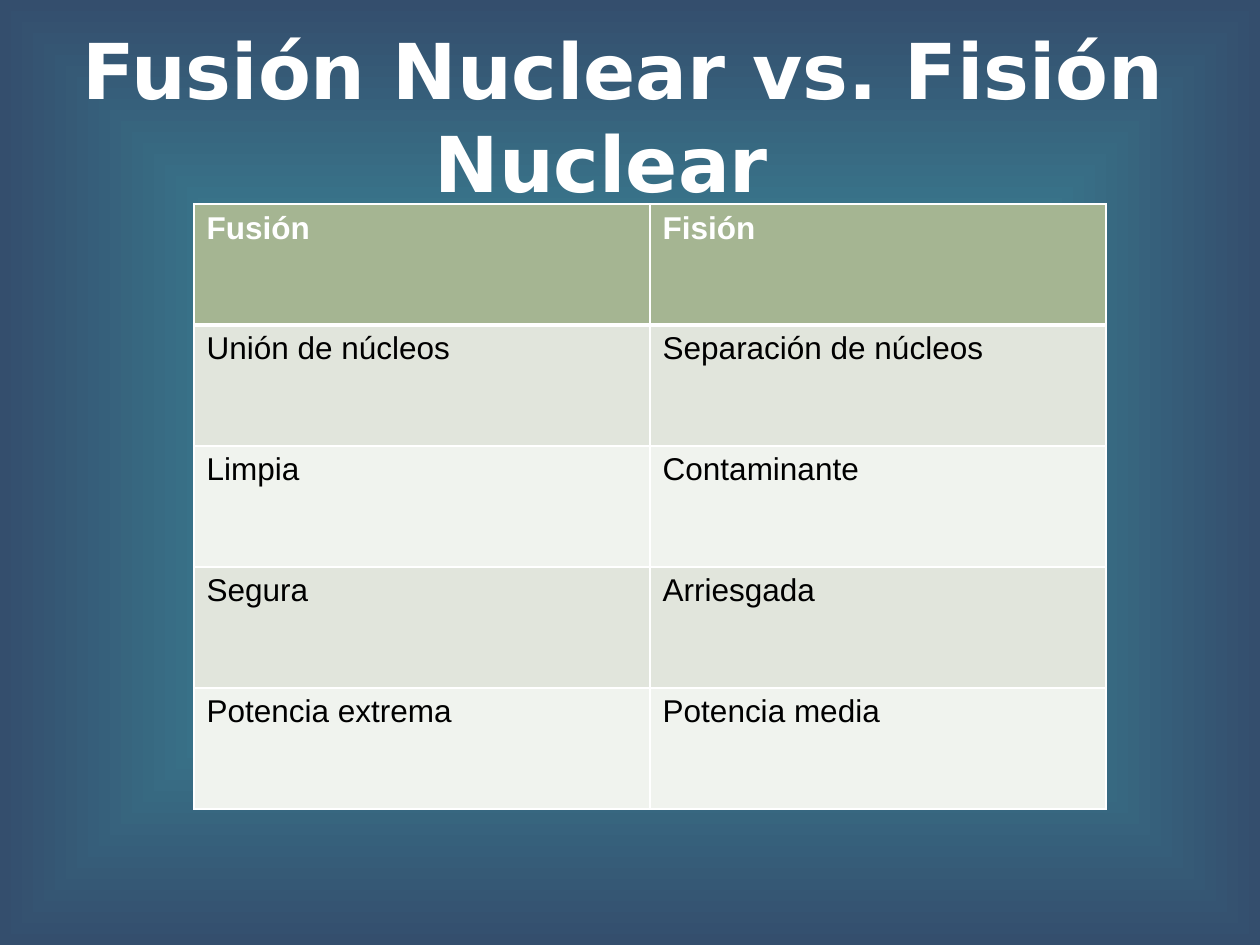
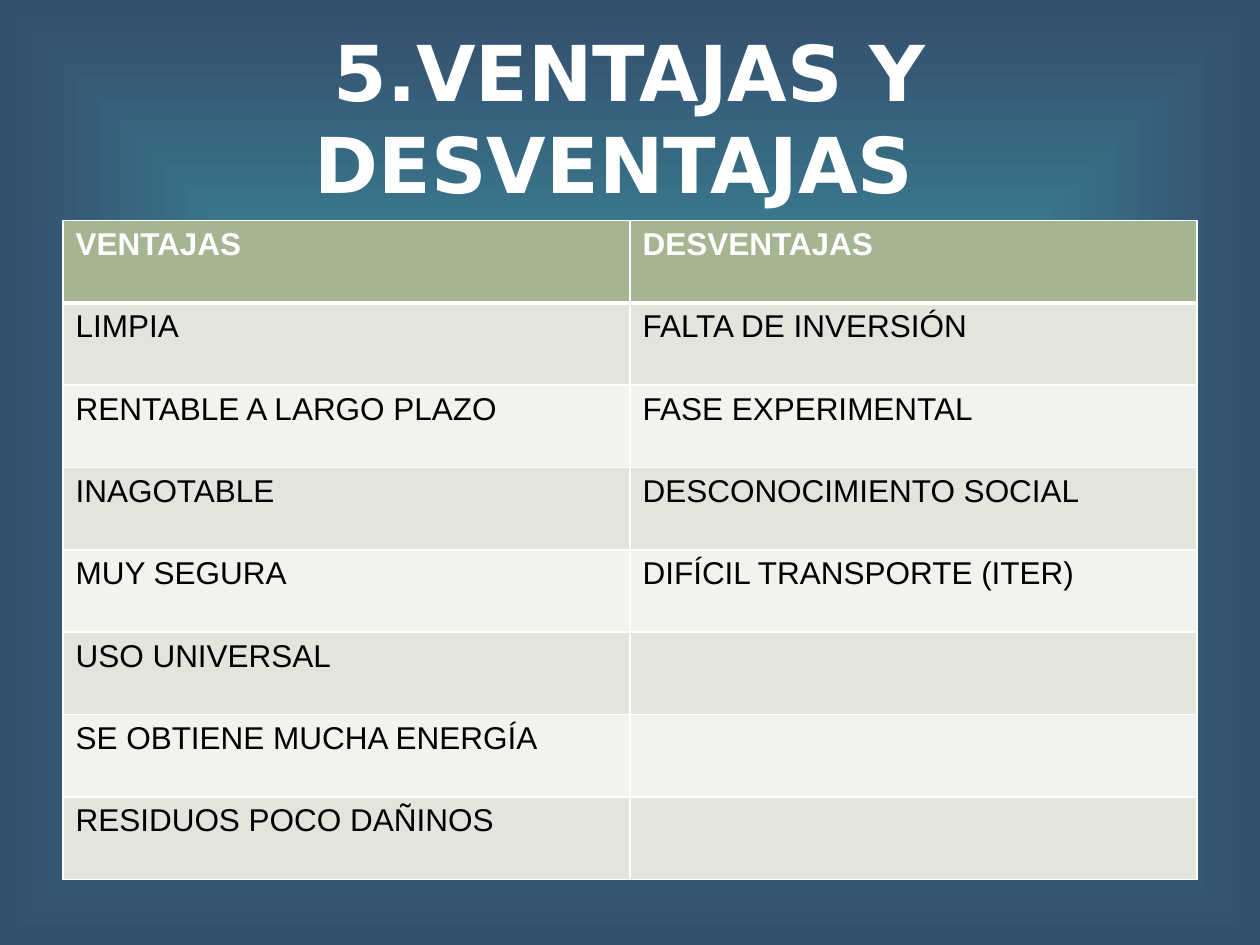
from lxml import etree
from pptx import Presentation
from pptx.dml.color import RGBColor
from pptx.enum.text import MSO_ANCHOR, PP_ALIGN
from pptx.oxml.ns import qn
from pptx.util import Inches, Pt

CENTER = PP_ALIGN.CENTER
MIDDLE = MSO_ANCHOR.MIDDLE
BLANK_LAYOUT = 6

# The slide is a grid of 100 columns by 75 rows
COLUMNS, ROWS = 100, 75

COMPARISON = [
    ("Fusión", "Fisión"),
    ("Unión de núcleos", "Separación de núcleos"),
    ("Limpia", "Contaminante"),
    ("Segura", "Arriesgada"),
    ("Potencia extrema", "Potencia media"),
]

PROS_AND_CONS = [
    ("VENTAJAS", "DESVENTAJAS"),
    ("LIMPIA", "FALTA DE INVERSIÓN"),
    ("RENTABLE A LARGO PLAZO", "FASE EXPERIMENTAL"),
    ("INAGOTABLE", "DESCONOCIMIENTO SOCIAL"),
    ("MUY SEGURA", "DIFÍCIL TRANSPORTE (ITER)"),
    ("USO UNIVERSAL", ""),
    ("SE OBTIENE MUCHA ENERGÍA", ""),
    ("RESIDUOS POCO DAÑINOS", ""),
]


def color(value):
    return RGBColor.from_string(value)


class SlideBuilder:
    """Holds the shared style and the slide being built."""

    title_font, title_size = "DejaVu Sans", 44
    body_font, body_size = "Arial", 18
    white, black = "FFFFFF", "000000"
    glow, edge = "3FA4AF", "344E6D"
    header_fill = "A5B592"
    band_fills = ("F0F3EE", "E1E5DC")
    thin, thick = 1, 3

    def __init__(self, deck):
        self.deck = deck
        self.slide = None

    def place(self, left, top, width, height):
        column = self.deck.slide_width / COLUMNS
        row = self.deck.slide_height / ROWS
        return (round(left * column), round(top * row),
                round(width * column), round(height * row))

    def new_slide(self):
        layout = self.deck.slide_layouts[BLANK_LAYOUT]
        self.slide = self.deck.slides.add_slide(layout)
        self.background()

    def background(self):
        fill = self.slide.background.fill
        fill.gradient()
        for stop, position, shade in zip(fill.gradient_stops, (0, 1), (self.glow, self.edge)):
            stop.position = position
            stop.color.rgb = color(shade)
        # Let the gradient spread from the centre of the slide
        gradient = self.slide.element.find(".//" + qn("a:gradFill"))
        gradient.remove(gradient.find(qn("a:lin")))
        spread = etree.SubElement(gradient, qn("a:path"), path="shape")
        etree.SubElement(spread, qn("a:fillToRect"),
                         {side: "50000" for side in "ltrb"})

    def format_runs(self, para, font, size, shade, bold):
        for span in para.runs:
            span.font.name = font
            span.font.size = Pt(size)
            span.font.bold = bold
            span.font.color.rgb = color(shade)

    def title(self, text, at):
        frame = self.slide.shapes.add_textbox(*self.place(*at)).text_frame
        frame.word_wrap = True
        frame.vertical_anchor = MIDDLE
        frame.text = text
        para = frame.paragraphs[0]
        para.alignment = CENTER
        self.format_runs(para, self.title_font, self.title_size, self.white, True)

    def table(self, records, at):
        left, top, width, height = self.place(*at)
        table = self.slide.shapes.add_table(
            len(records), len(records[0]), left, top, width, height).table
        table.first_row = table.horz_banding = False
        for row_index, record in enumerate(records):
            for column_index, text in enumerate(record):
                self.cell(table.cell(row_index, column_index), row_index, text)

    def cell(self, cell, row_index, text):
        is_header = row_index == 0
        self.borders(cell,
                     top=self.thick if row_index == 1 else self.thin,
                     bottom=self.thick if is_header else self.thin)
        cell.fill.solid()
        cell.fill.fore_color.rgb = color(
            self.header_fill if is_header else self.band_fills[row_index % 2])
        cell.text_frame.text = text
        self.format_runs(cell.text_frame.paragraphs[0], self.body_font, self.body_size,
                         self.white if is_header else self.black, is_header)

    def borders(self, cell, top, bottom):
        properties = cell._tc.get_or_add_tcPr()
        widths = {"a:lnL": self.thin, "a:lnR": self.thin, "a:lnT": top, "a:lnB": bottom}
        for tag, width in widths.items():
            line = etree.SubElement(properties, qn(tag), w=str(Pt(width)))
            fill = etree.SubElement(line, qn("a:solidFill"))
            etree.SubElement(fill, qn("a:srgbClr"), val=self.white)


def main():
    deck = Presentation()
    deck.slide_width, deck.slide_height = Inches(10), Inches(7.5)
    page = SlideBuilder(deck)

    # Fusion against fission
    page.new_slide()
    page.title("Fusión Nuclear vs. Fisión Nuclear\t", at=(2, 2.9, 95, 12.5))
    page.table(COMPARISON, at=(15.4, 16.2, 72.4, 48))

    # Advantages and disadvantages
    page.new_slide()
    page.title("5.VENTAJAS Y DESVENTAJAS\t", at=(5, 3, 90, 12.5))
    page.table(PROS_AND_CONS, at=(5, 17.5, 90, 52.3))

    deck.save("out.pptx")


if __name__ == "__main__":
    main()
